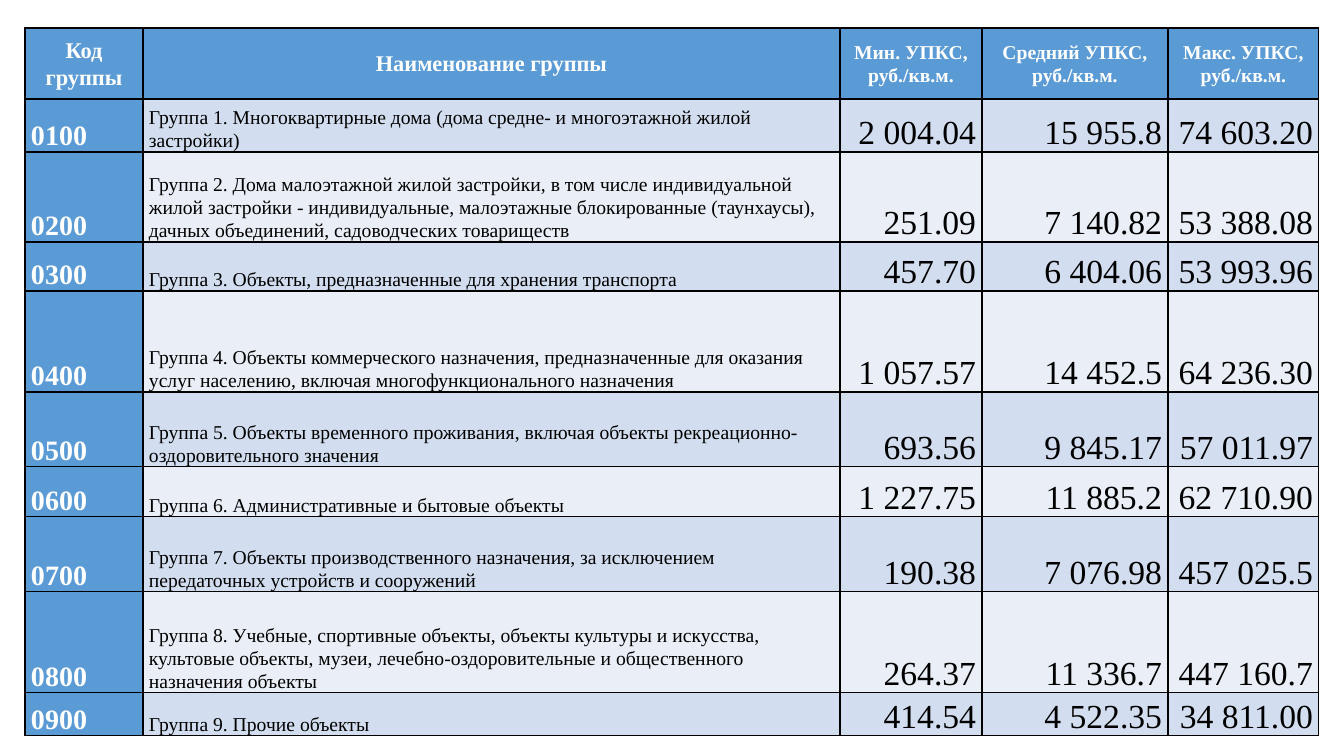
from lxml.etree import SubElement
from pptx import Presentation
from pptx.dml.color import RGBColor
from pptx.enum.text import MSO_ANCHOR as Anchor, PP_ALIGN as Align
from pptx.oxml.ns import qn
from pptx.util import Emu, Pt

EMU_PER_PX = 12192000 / 1344

THEME = {
    "font": "Times New Roman",
    "header_fill": "5B9BD5",
    "bands": ("D2DEEF", "EAEFF7"),
    "light_text": "FFFFFF",
    "dark_text": "000000",
    "border": "000000",
    "header_size": 16,
    "measure_size": 14,
    "code_size": 20,
    "name_size": 14,
    "value_size": 24,
    "line_spacing": 1.07,
}

HEADERS = ("Код группы", "Наименование группы", "Мин. УПКС, руб./кв.м.",
           "Средний УПКС, руб./кв.м.", "Макс. УПКС, руб./кв.м.")
GROUPS = [
    ("Многоквартирные дома (дома средне- и многоэтажной жилой застройки)",
     "2 004.04", "15 955.8", "74 603.20"),
    ("Дома малоэтажной жилой застройки, в том числе индивидуальной жилой "
     "застройки - индивидуальные, малоэтажные блокированные (таунхаусы), "
     "дачных объединений, садоводческих товариществ",
     "251.09", "7 140.82", "53 388.08"),
    ("Объекты, предназначенные для хранения транспорта",
     "457.70", "6 404.06", "53 993.96"),
    ("Объекты коммерческого назначения, предназначенные для оказания услуг "
     "населению, включая многофункционального назначения",
     "1 057.57", "14 452.5", "64 236.30"),
    ("Объекты временного проживания, включая объекты "
     "рекреационно-оздоровительного значения",
     "693.56", "9 845.17", "57 011.97"),
    ("Административные и бытовые объекты",
     "1 227.75", "11 885.2", "62 710.90"),
    ("Объекты производственного назначения, за исключением передаточных "
     "устройств и сооружений",
     "190.38", "7 076.98", "457 025.5"),
    ("Учебные, спортивные объекты, объекты культуры и искусства, культовые "
     "объекты, музеи, лечебно-оздоровительные и общественного назначения объекты",
     "264.37", "11 336.7", "447 160.7"),
    ("Прочие объекты", "414.54", "4 522.35", "34 811.00"),
]
COLUMN_WIDTHS = (118, 697, 142, 186, 151)
ROW_HEIGHTS = (71, 53, 90, 49, 101, 75, 50, 75, 101, 43)


def px(length):
    """Turn slide pixels into EMU."""
    return Emu(round(length * EMU_PER_PX))


def fill_cell(cell, text, fill, color, size, bold, align, anchor):
    """Write one table cell with its border, background and text format."""
    cell.margin_left = cell.margin_right = px(6)
    cell.margin_top = cell.margin_bottom = 0
    cell.vertical_anchor = anchor
    properties = cell._tc.get_or_add_tcPr()
    for side in ("a:lnL", "a:lnR", "a:lnT", "a:lnB"):
        border = SubElement(properties, qn(side), w=str(Pt(1)))
        border_fill = SubElement(border, qn("a:solidFill"))
        SubElement(border_fill, qn("a:srgbClr"), val=THEME["border"])
    cell.fill.solid()
    cell.fill.fore_color.rgb = RGBColor.from_string(fill)
    cell.text_frame.text = text
    paragraph = cell.text_frame.paragraphs[0]
    paragraph.alignment = align
    paragraph.line_spacing = THEME["line_spacing"]
    font = paragraph.runs[0].font
    font.name = THEME["font"]
    font.size = Pt(size)
    font.bold = bold
    font.color.rgb = RGBColor.from_string(color)


presentation = Presentation()
presentation.slide_width = px(1344)
presentation.slide_height = px(756)
slide = presentation.slides.add_slide(presentation.slide_layouts[6])

price_table = slide.shapes.add_table(
    len(ROW_HEIGHTS), len(COLUMN_WIDTHS), px(25), px(28),
    px(sum(COLUMN_WIDTHS)), px(sum(ROW_HEIGHTS))).table
for column, width in zip(price_table.columns, COLUMN_WIDTHS):
    column.width = px(width)
for row, height in zip(price_table.rows, ROW_HEIGHTS):
    row.height = px(height)

for index, header in enumerate(HEADERS):
    size = THEME["header_size"] if index < 2 else THEME["measure_size"]
    fill_cell(price_table.cell(0, index), header, THEME["header_fill"],
              THEME["light_text"], size, True, Align.CENTER, Anchor.MIDDLE)

for number, (name, *values) in enumerate(GROUPS, start=1):
    band = THEME["bands"][(number - 1) % 2]
    fill_cell(price_table.cell(number, 0), f"{number * 100:04}", THEME["header_fill"],
              THEME["light_text"], THEME["code_size"], True, Align.LEFT, Anchor.BOTTOM)
    fill_cell(price_table.cell(number, 1), f"Группа {number}. {name}", band,
              THEME["dark_text"], THEME["name_size"], False, Align.LEFT, Anchor.BOTTOM)
    for index, value in enumerate(values, start=2):
        fill_cell(price_table.cell(number, index), value, band,
                  THEME["dark_text"], THEME["value_size"], False, Align.RIGHT, Anchor.BOTTOM)

presentation.save("out.pptx")
